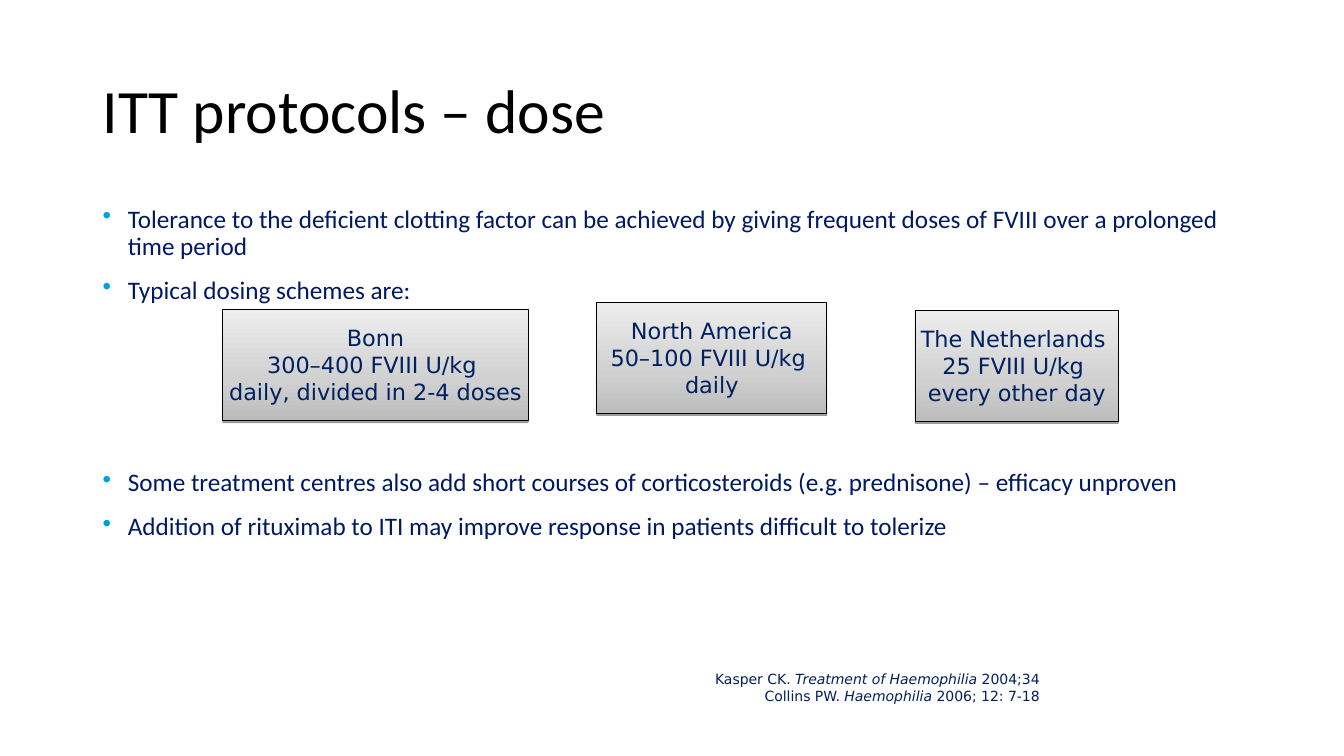
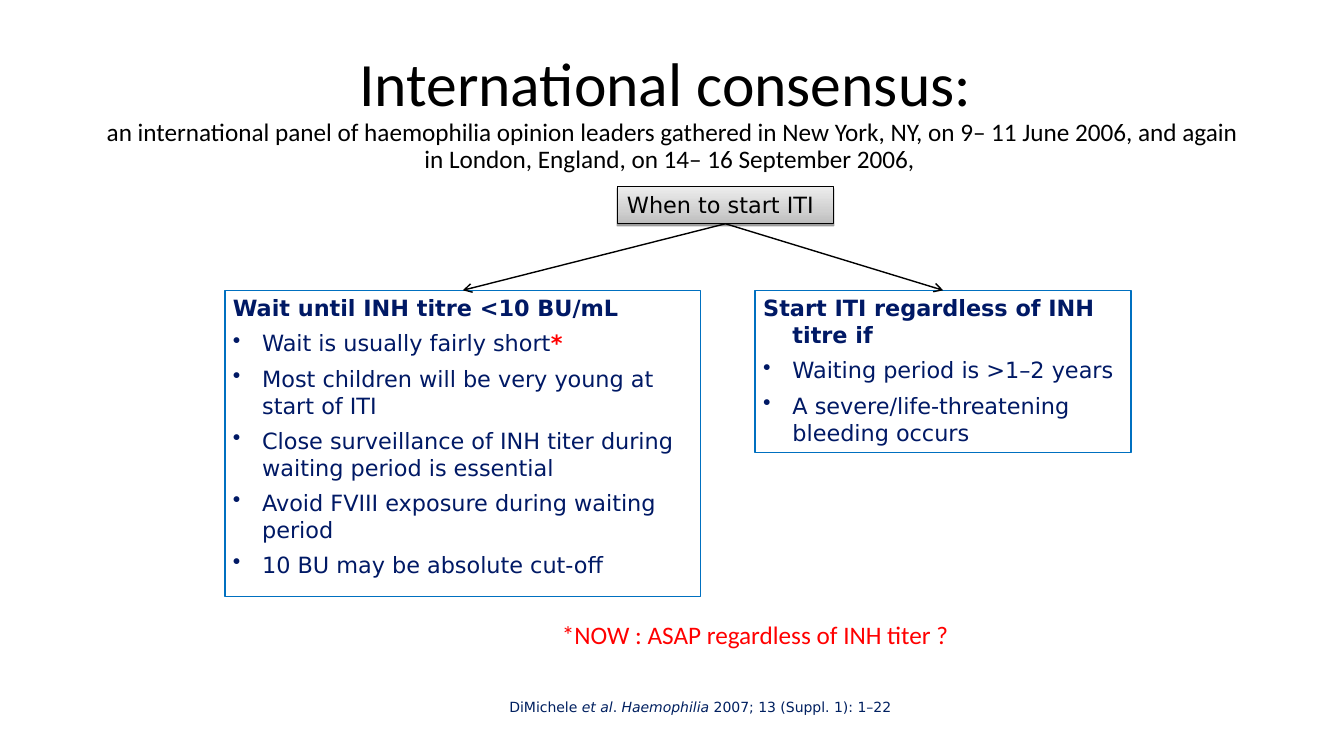
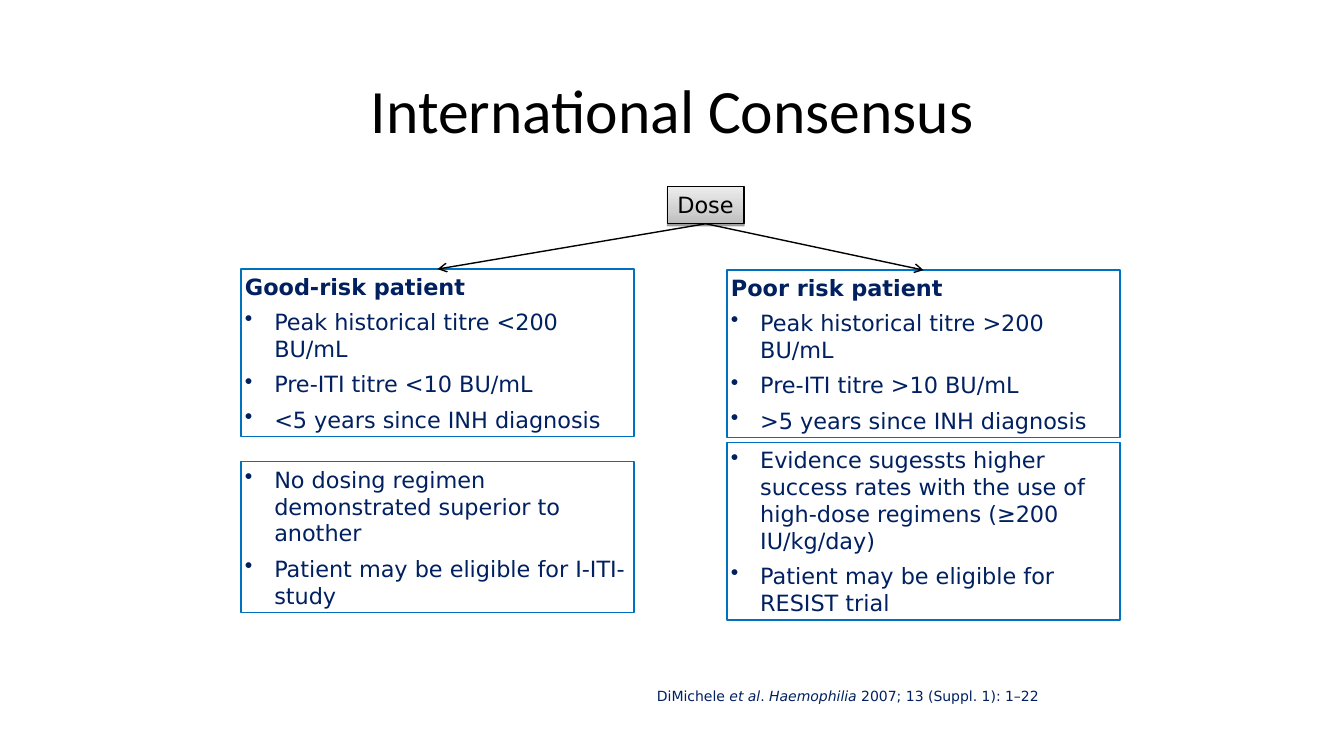
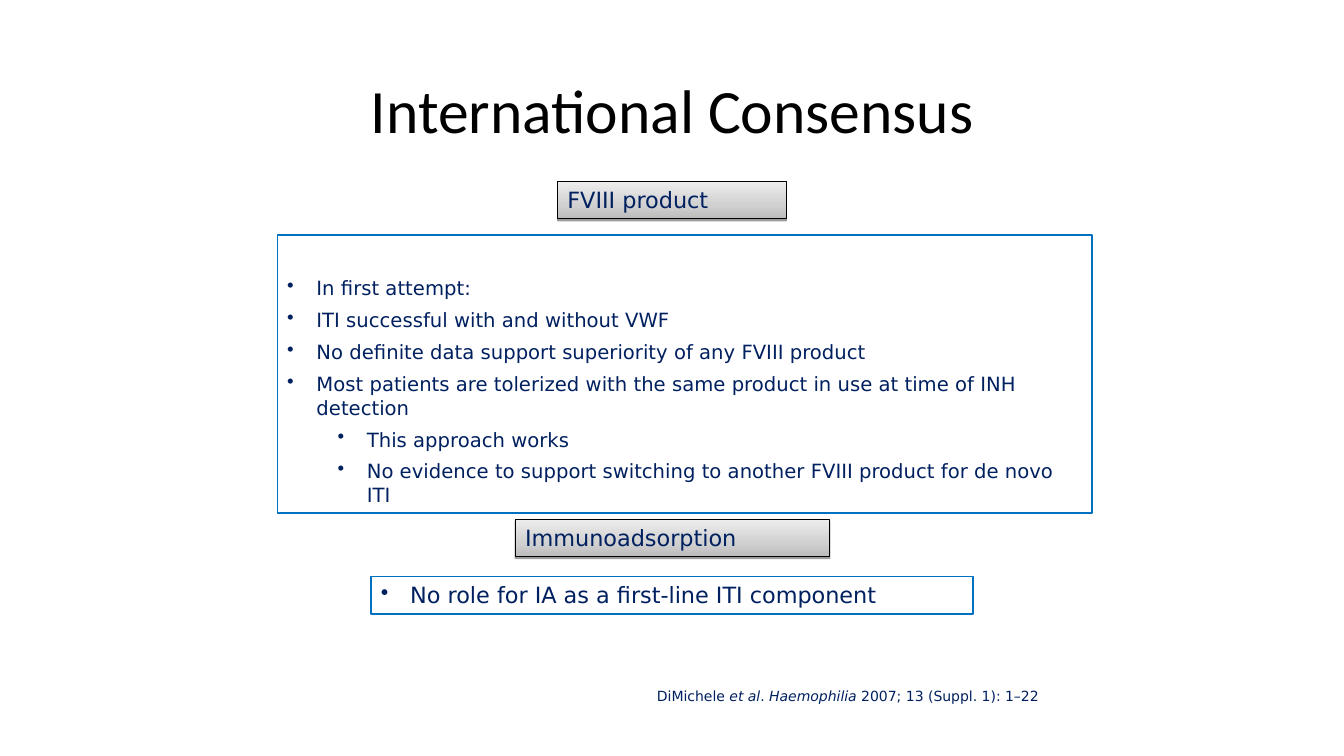
from copy import deepcopy
from dataclasses import dataclass, replace
from typing import Optional

from lxml.etree import SubElement
from pptx import Presentation
from pptx.dml.color import RGBColor
from pptx.enum.shapes import MSO_CONNECTOR, MSO_SHAPE
from pptx.enum.text import MSO_ANCHOR as Anchor, PP_ALIGN as Align
from pptx.oxml.ns import qn
from pptx.util import Pt

PX = 9144  # EMU; 100 px to the inch


@dataclass(frozen=True)
class Style:
    """Look of a text; `marked` is the look of the parts between underscores."""
    size: int
    color: str
    font: str = "DejaVu Sans"
    bold: bool = False
    italic: bool = False
    align: Align = Align.LEFT
    line_spacing: float = 1.0
    before: int = 0
    bullet: str = ""
    indent: int = 29
    marked: Optional["Style"] = None


class Theme:
    BLACK, NAVY, INK = "000000", "002060", "001965"
    RED, CYAN, BLUE, WHITE = "FF0000", "009FDA", "0070C0", "FFFFFF"
    GREYS = ((0, "BCBCBC"), (0.35, "D0D0D0"), (1, "EDEDED"))

    TITLE = Style(44, BLACK, "Calibri", align=Align.CENTER, line_spacing=0.9)
    SUBTITLE = replace(TITLE, size=18)
    BODY = Style(18, INK, "Calibri", line_spacing=0.9, before=12, bullet=CYAN, indent=25)
    NOTE = Style(18, RED, "Calibri", align=Align.CENTER)
    CITATION = Style(10, NAVY, align=Align.RIGHT, marked=Style(10, NAVY, italic=True))
    TAG = Style(16, NAVY)
    DARK_TAG = replace(TAG, color=BLACK)
    SCHEME = replace(TAG, align=Align.CENTER)
    LIST = Style(16, NAVY, before=6, bullet=NAVY)
    INK_LIST = replace(LIST, color=INK, bullet=INK, marked=Style(16, RED, bold=True))
    SMALL_LIST = replace(LIST, size=14)


def rgb(color):
    return RGBColor.from_string(color)


class Deck:
    def __init__(self):
        self.prs = Presentation()
        self.prs.slide_width, self.prs.slide_height = 1333 * PX, 750 * PX
        self.s = None

    def slide(self):
        self.s = self.prs.slides.add_slide(self.prs.slide_layouts[6])

    def frame(self, sp, insets=(10, 5, 10, 5), anchor=Anchor.TOP):
        tf = sp.text_frame
        tf.word_wrap = True
        tf.vertical_anchor = anchor
        (tf.margin_left, tf.margin_top,
         tf.margin_right, tf.margin_bottom) = (n * PX for n in insets)
        return tf

    def paragraph(self, tf, text, style, level=0):
        first = not tf.paragraphs[0].runs
        p = tf.paragraphs[0] if first else tf.add_paragraph()
        if style.bullet:
            self.bullet(p, style, level)
        p.alignment = style.align
        p.line_spacing = style.line_spacing
        p.space_before = Pt(0 if first else style.before)
        for i, piece in enumerate(text.split("_")):
            look = style.marked if i % 2 else style
            r = p.add_run()
            r.text = piece
            r.font.name, r.font.size = look.font, Pt(look.size)
            r.font.bold, r.font.italic = look.bold, look.italic
            r.font.color.rgb = rgb(look.color)

    def bullet(self, p, style, level):
        """Hang the paragraph; a bold one is a heading and gets no bullet sign."""
        pPr = p._p.get_or_add_pPr()
        pPr.set("marL", str((style.indent + 50 * level) * PX))
        pPr.set("indent", str(-style.indent * PX))
        if style.bold:
            SubElement(pPr, qn("a:buNone"))
            return
        SubElement(SubElement(pPr, qn("a:buClr")), qn("a:srgbClr"), val=style.bullet)
        SubElement(pPr, qn("a:buChar"), char="•")

    def bullets(self, tf, items, style, heading=None):
        """Write the items as a list; a nested list goes one level down."""
        if heading:
            self.paragraph(tf, heading, replace(style, bold=True))
        for item in items:
            if isinstance(item, str):
                self.paragraph(tf, item, style)
            else:
                for sub in item:
                    self.paragraph(tf, sub, style, level=1)

    def text(self, box, lines, style, anchor=Anchor.TOP):
        sp = self.s.shapes.add_textbox(*(n * PX for n in box))
        tf = self.frame(sp, anchor=anchor)
        for line in lines:
            self.paragraph(tf, line, style)
        return tf

    def title(self, text, subtitle=None, align=Align.CENTER):
        tf = self.text((92, 40, 1150, 145), [text], replace(Theme.TITLE, align=align),
                       Anchor.MIDDLE)
        if subtitle:
            self.paragraph(tf, subtitle, Theme.SUBTITLE)

    def citation(self, lines, box=(531, 677, 509, 27), align=Align.RIGHT):
        self.text(box, lines, replace(Theme.CITATION, align=align), Anchor.BOTTOM)

    def rect(self, box, line, width):
        sp = self.s.shapes.add_shape(MSO_SHAPE.RECTANGLE, *(n * PX for n in box))
        sp.shadow.inherit = False
        sp.line.color.rgb = rgb(line)
        sp.line.width = Pt(width)
        return sp

    def tag(self, box, lines, style=Theme.TAG, insets=(10, 5, 5, 5), anchor=Anchor.TOP):
        """Grey gradient box with a hard shadow below."""
        sp = self.rect(box, Theme.BLACK, 0.75)
        sp.fill.gradient()
        sp.fill.gradient_angle = 90
        spPr = sp._element.spPr
        stops = spPr.find(".//" + qn("a:gsLst"))
        stops.append(deepcopy(stops[0]))
        for stop, (position, color) in zip(sp.fill.gradient_stops, Theme.GREYS):
            stop.position = position
            stop.color.rgb = rgb(color)
        shadow = SubElement(spPr.find(qn("a:effectLst")), qn("a:outerShdw"), blurRad="0",
                            dist=str(Pt(1.6)), dir="5400000", rotWithShape="0")
        black = SubElement(shadow, qn("a:srgbClr"), val=Theme.BLACK)
        SubElement(black, qn("a:alpha"), val="38000")
        tf = self.frame(sp, insets, anchor)
        for line in lines:
            self.paragraph(tf, line, style)
        return sp

    def panel(self, box, items, style=Theme.LIST, heading=None,
              insets=(10, 5, 10, 5), anchor=Anchor.TOP):
        sp = self.rect(box, Theme.BLUE, 1)
        sp.fill.solid()
        sp.fill.fore_color.rgb = rgb(Theme.WHITE)
        self.bullets(self.frame(sp, insets, anchor), items, style, heading)
        return sp

    def arrow(self, start, end):
        """Join the bottom of one box to the top of another."""
        cx = self.s.shapes.add_connector(MSO_CONNECTOR.STRAIGHT, 0, 0, 0, 0)
        cx.begin_connect(start, 2)
        cx.end_connect(end, 0)
        cx.line.color.rgb = rgb(Theme.BLACK)
        cx.line.width = Pt(1)
        SubElement(cx.line._get_or_add_ln(), qn("a:tailEnd"), type="arrow")
        SubElement(cx._element.spPr, qn("a:effectLst"))


CONSENSUS = ["DiMichele _et al_. _Haemophilia_ 2007; 13 (Suppl. 1): 1–22"]


def dose_protocols(d):
    d.slide()
    d.title("ITT protocols – dose", align=Align.LEFT)
    tf = d.text((92, 200, 1150, 476), [
        "Tolerance to the deficient clotting factor can be achieved by giving frequent "
        "doses of FVIII over a prolonged time period",
        "Typical dosing schemes are:",
        "Some treatment centres also add short courses of corticosteroids "
        "(e.g. prednisone) – efficacy unproven",
        "Addition of rituximab to ITI may improve response in patients difficult to tolerize",
    ], Theme.BODY)
    tf.paragraphs[2].space_before = Pt(118)  # room for the schemes
    d.citation(["Kasper CK. _Treatment of Haemophilia _2004;34",
                "Collins PW. _Haemophilia _2006; 12: 7-18"], (543, 661, 498, 43))
    schemes = (
        (221, 307, 303, ["Bonn", "300–400 FVIII U/kg ", "daily, divided in 2-4 doses"]),
        (908, 308, 201, ["The Netherlands ", "25 FVIII U/kg ", "every other day"]),
        (592, 300, 228, ["North America", "50–100 FVIII U/kg ", "daily"]),
    )
    for x, y, w, lines in schemes:
        d.tag((x, y, w, 110), lines, Theme.SCHEME, (4, 4, 4, 4), Anchor.MIDDLE)


def when_to_start(d):
    d.slide()
    d.title("International consensus: ",
            "an international panel of haemophilia opinion leaders gathered in New York, NY, "
            "on 9– 11 June 2006, and again in London, England, on 14– 16 September 2006, ")
    d.citation(CONSENSUS, (440, 688, 509, 27), Align.CENTER)
    start = d.tag((612, 185, 215, 37), ["When to start ITI"], Theme.DARK_TAG)
    insets = (8, 4, 8, 4)
    wait = d.panel((223, 288, 472, 304), [
        "Wait is usually fairly short_*_",
        "Most children will be very young at start of ITI",
        "Close surveillance of INH titer during waiting period is essential",
        "Avoid FVIII exposure during waiting period",
        "10 BU may be absolute cut-off",
    ], Theme.INK_LIST, "Wait until INH titre <10 BU/mL", insets)
    regardless = d.panel((749, 288, 373, 161), [
        "Waiting period is >1–2 years",
        "A severe/life-threatening bleeding occurs",
    ], Theme.INK_LIST, "Start ITI regardless of INH titre if", insets)
    for panel in (wait, regardless):
        d.arrow(start, panel)
    d.text((509, 609, 480, 40), ["*NOW : ASAP regardless of INH titer ?"], Theme.NOTE)


def dose_by_risk(d):
    d.slide()
    d.title("International Consensus")
    dose = d.tag((662, 185, 76, 37), ["Dose"], Theme.DARK_TAG)
    risks = (
        (239, 267, "Good-risk patient", "<", 458, 150,
         ["No dosing regimen demonstrated superior to another",
          "Patient may be eligible for I-ITI-study"]),
        (721, 268, "Poor risk patient", ">", 439, 176,
         ["Evidence sugessts higher success rates with the use of high-dose regimens "
          "(≥200 IU/kg/day)",
          "Patient may be eligible for RESIST trial"]),
    )
    layout = dict(insets=(4, 4, 4, 4), anchor=Anchor.MIDDLE)
    for x, y, heading, sign, advice_y, advice_h, advice in risks:
        criteria = [f"Peak historical titre {sign}200 BU/mL",
                    f"Pre-ITI titre {sign}10 BU/mL",
                    f"{sign}5 years since INH diagnosis"]
        risk = d.panel((x, y, 390, 166), criteria, heading=heading, **layout)
        d.arrow(dose, risk)
        d.panel((x, advice_y, 390, advice_h), advice, **layout)
    d.citation(CONSENSUS)


def product_choice(d):
    d.slide()
    d.title("International Consensus")
    d.tag((553, 180, 227, 37), ["FVIII product"])
    d.panel((275, 233, 808, 276), [
        "In first attempt:",
        "ITI successful with and without VWF",
        "No definite data support superiority of any FVIII product",
        "Most patients are tolerized with the same product in use at time of INH detection",
        ["This approach works",
         "No evidence to support switching to another FVIII product for de novo ITI"],
    ], Theme.SMALL_LIST, insets=(10, 41, 10, 5))
    d.tag((511, 515, 312, 37), ["Immunoadsorption"])
    d.panel((368, 572, 597, 37), ["No role for IA as a first-line ITI component"])
    d.citation(CONSENSUS)


def main():
    d = Deck()
    for build in (dose_protocols, when_to_start, dose_by_risk, product_choice):
        build(d)
    d.prs.save("out.pptx")


if __name__ == "__main__":
    main()
